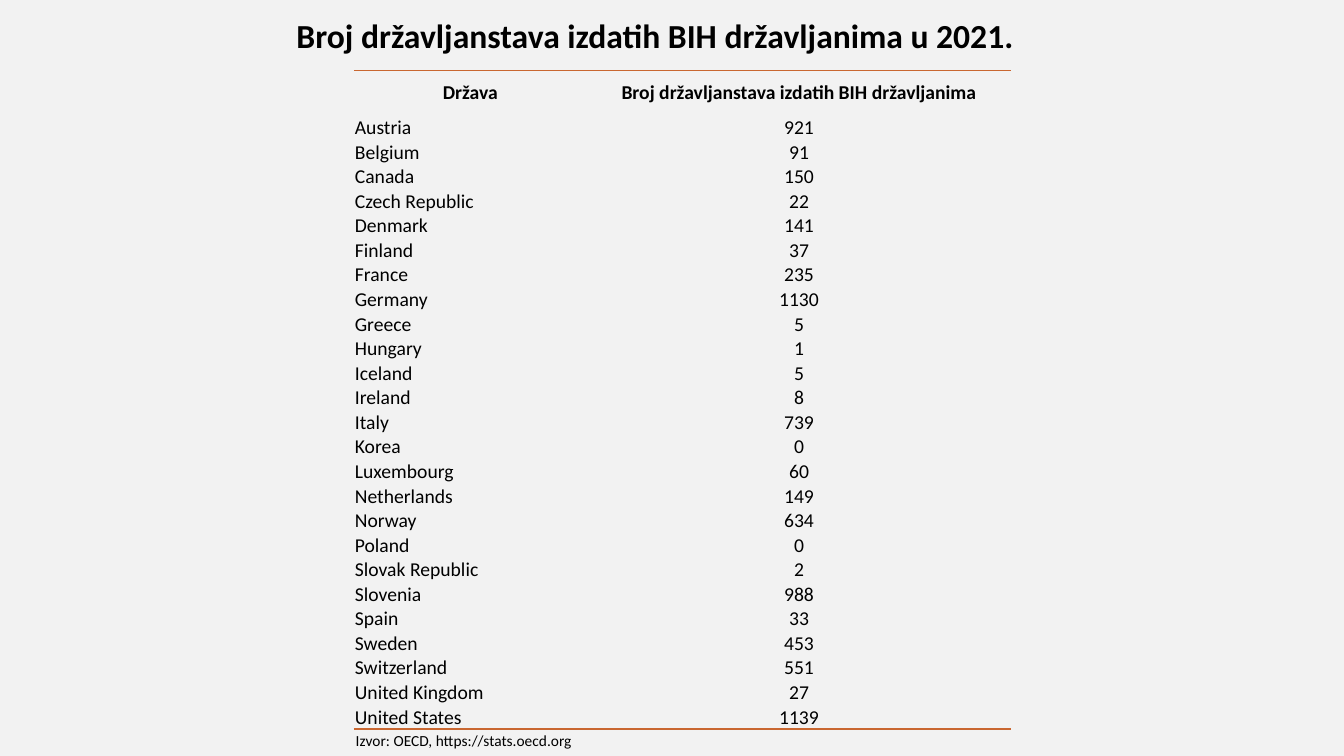
"""Build a slide listing citizenships granted to BIH nationals in 2021."""
from lxml.etree import fromstring
from pptx import Presentation
from pptx.dml.color import RGBColor
from pptx.enum.text import MSO_ANCHOR, MSO_AUTO_SIZE, PP_ALIGN
from pptx.oxml.ns import nsdecls, qn
from pptx.util import Inches, Pt

TITLE = "Broj državljanstava izdatih BIH državljanima u 2021."
SOURCE = "Izvor: OECD, https://stats.oecd.org"
HEADERS = ("Država", "Broj državljanstava izdatih BIH državljanima")
COUNTRIES = [
    ("Austria", 921),
    ("Belgium", 91),
    ("Canada", 150),
    ("Czech Republic", 22),
    ("Denmark", 141),
    ("Finland", 37),
    ("France", 235),
    ("Germany", 1130),
    ("Greece", 5),
    ("Hungary", 1),
    ("Iceland", 5),
    ("Ireland", 8),
    ("Italy", 739),
    ("Korea", 0),
    ("Luxembourg", 60),
    ("Netherlands", 149),
    ("Norway", 634),
    ("Poland", 0),
    ("Slovak Republic", 2),
    ("Slovenia", 988),
    ("Spain", 33),
    ("Sweden", 453),
    ("Switzerland", 551),
    ("United Kingdom", 27),
    ("United States", 1139),
]
COLUMN_WIDTHS = (2.31, 4.21)
HEADER_HEIGHT, ROW_HEIGHT = 0.44, 0.24
BACKGROUND, TEXT, RULE = "F2F2F2", "000000", "C96731"
FONT = "Calibri"
PLAIN_STYLE = "{2D5ABB26-0587-4C30-8999-92F81FD0307C}"


def color(value):
    return RGBColor.from_string(value)


def write(frame, text, size, bold=False, align=PP_ALIGN.LEFT):
    para = frame.paragraphs[0]
    para.alignment = align
    span = para.add_run()
    span.text = text
    span.font.name = FONT
    span.font.size = Pt(size)
    span.font.bold = bold
    span.font.color.rgb = color(TEXT)


def fit_text(box):
    frame = box.text_frame
    frame.word_wrap = True
    frame.auto_size = MSO_AUTO_SIZE.SHAPE_TO_FIT_TEXT
    frame.vertical_anchor = MSO_ANCHOR.TOP
    return frame


def add_rule(cell, side):
    cell._tc.get_or_add_tcPr().insert(0, fromstring(
        f'<a:{side} {nsdecls("a")} w="{Pt(1)}"><a:solidFill>'
        f'<a:srgbClr val="{RULE}"/></a:solidFill></a:{side}>'))


def add_country_table(page):
    rows = [HEADERS, *COUNTRIES]
    height = HEADER_HEIGHT + ROW_HEIGHT * len(COUNTRIES)
    holder = page.shapes.add_table(
        len(rows), len(HEADERS), Inches(3.51), Inches(0.7),
        Inches(sum(COLUMN_WIDTHS)), Inches(height))
    table = holder.table
    table.first_row = True
    table.horz_banding = False
    next(holder.element.iter(qn("a:tableStyleId"))).text = PLAIN_STYLE
    for column, width in zip(table.columns, COLUMN_WIDTHS):
        column.width = Inches(width)

    for row_index, values in enumerate(rows):
        is_header = row_index == 0
        table.rows[row_index].height = Inches(HEADER_HEIGHT if is_header else ROW_HEIGHT)
        for column_index, value in enumerate(values):
            cell = table.cell(row_index, column_index)
            cell.margin_left = cell.margin_right = cell.margin_top = Inches(0.01)
            cell.margin_bottom = 0
            cell.vertical_anchor = MSO_ANCHOR.MIDDLE
            cell.fill.background()
            centered = is_header or column_index > 0
            write(cell.text_frame, str(value), 14, is_header,
                  PP_ALIGN.CENTER if centered else PP_ALIGN.LEFT)
            if is_header:
                add_rule(cell, "lnT")
            elif row_index == len(rows) - 1:
                add_rule(cell, "lnB")


def main():
    deck = Presentation()
    deck.slide_width, deck.slide_height = Inches(13.33), Inches(7.5)
    page = deck.slides.add_slide(deck.slide_layouts[5])
    page.background.fill.solid()
    page.background.fill.fore_color.rgb = color(BACKGROUND)

    add_country_table(page)

    title = page.shapes.title
    title.left, title.top = Inches(2.84), Inches(0.1)
    title.width, title.height = Inches(8.87), Inches(0.5)
    write(fit_text(title), TITLE, 24, bold=True)

    source = page.shapes.add_textbox(Inches(3.43), Inches(7.2), Inches(7.82), Inches(0.3))
    write(fit_text(source), SOURCE, 11)

    deck.save("out.pptx")


if __name__ == "__main__":
    main()
